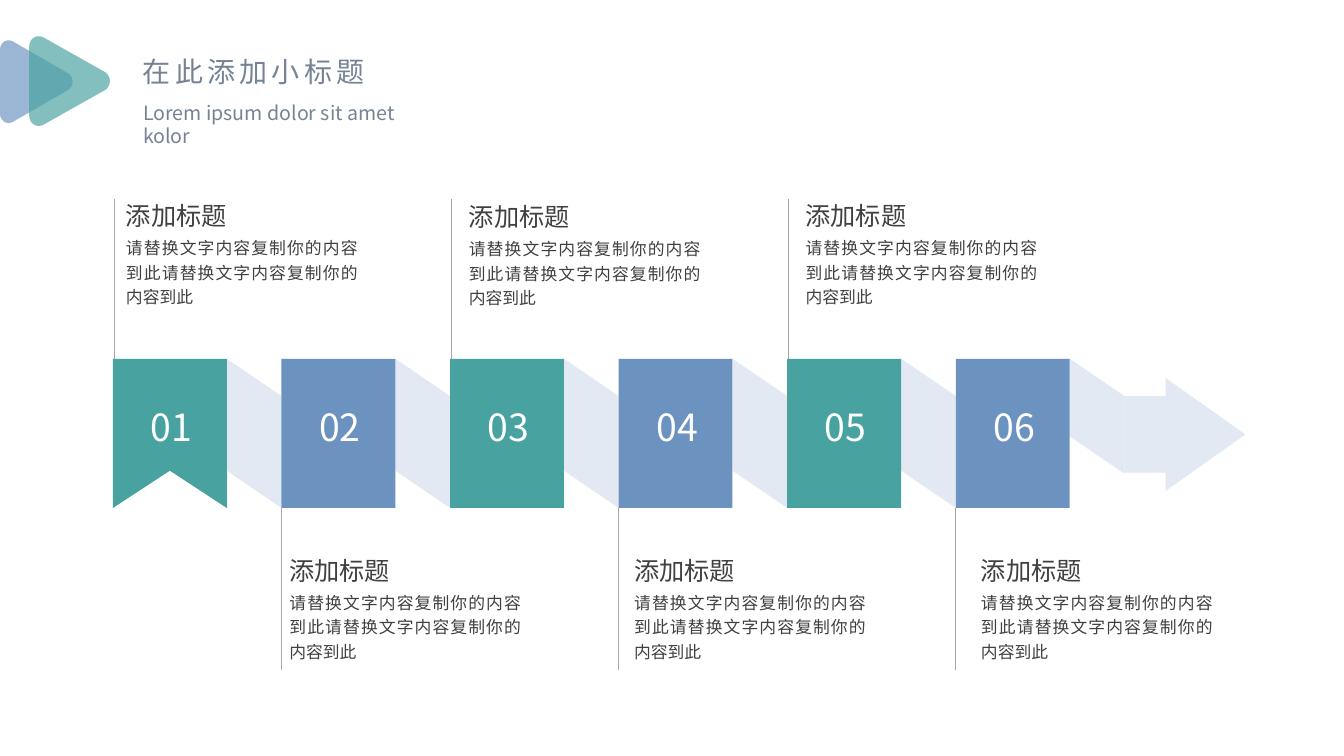
from lxml import etree
from pptx import Presentation
from pptx.dml.color import RGBColor
from pptx.enum.shapes import MSO_CONNECTOR, MSO_SHAPE
from pptx.enum.text import MSO_ANCHOR, PP_ALIGN
from pptx.oxml.ns import qn
from pptx.util import Inches, Pt

FONT = "Noto Sans CJK SC"
COLORS = {
    "teal": "48A2A0", "blue": "6C92C0", "pale": "E2E9F2", "rule": "A6A6A6",
    "title": "768394", "body": "404040", "white": "FFFFFF",
}
HEADING = "添加标题"
BODY = "请替换文字内容复制你的内容到此请替换文字内容复制你的内容到此"
# Left and top of each step's caption
CAPTIONS = [(1.12, 1.86), (2.74, 5.38), (4.52, 1.87),
            (6.16, 5.38), (7.86, 1.86), (9.6, 5.38)]
BLOCK_WIDTH, BLOCK_HEIGHT = 1.13, 1.48
FOLD = 0.37
RULE_LENGTH = 1.61


def rgb(name):
    return RGBColor.from_string(COLORS[name])


def paint(shape, color, opacity=None):
    shape.shadow.inherit = False
    shape.fill.solid()
    shape.fill.fore_color.rgb = rgb(color)
    shape.line.fill.background()
    if opacity is not None:
        tint = shape.fill._xPr.find(qn("a:solidFill"))[0]
        etree.SubElement(tint, qn("a:alpha")).set("val", str(opacity * 1000))


def add_polygon(slide, points, color, opacity=None):
    corners = [(Inches(x), Inches(y)) for x, y in points]
    builder = slide.shapes.build_freeform(*corners[0])
    builder.add_line_segments(corners[1:], close=True)
    paint(builder.convert_to_shape(), color, opacity)


def add_text(slide, box, lines, color, align=PP_ALIGN.LEFT):
    """Add a text box; lines holds a text and a size in points for each paragraph."""
    frame = slide.shapes.add_textbox(*map(Inches, box)).text_frame
    frame.word_wrap = True
    frame.text = "\n".join(text for text, _ in lines)
    for paragraph, (_, size) in zip(frame.paragraphs, lines):
        paragraph.alignment = align
        font = paragraph.runs[0].font
        font.size, font.name = Pt(size), FONT
        font.color.rgb = rgb(color)
        properties = paragraph.runs[0]._r.get_or_add_rPr()
        etree.SubElement(properties, qn("a:ea")).set("typeface", FONT)
    return frame


def bezier(start, control1, control2, end, steps=12):
    points = []
    for step in range(steps + 1):
        t = step / steps
        weights = ((1 - t) ** 3, 3 * t * (1 - t) ** 2, 3 * t * t * (1 - t), t ** 3)
        points.append(tuple(
            sum(weight * value for weight, value in zip(weights, values))
            for values in zip(start, control1, control2, end)))
    return points


def add_rounded_triangle(slide, box, color):
    """Add a translucent triangle with soft corners that points right."""
    left, top, width, height = box
    upper = bezier((0.19, 0.02), (0.1, -0.03), (0, 0.02), (0, 0.12))
    lower = [(x, 1 - y) for x, y in reversed(upper)]
    tip = bezier((0.94, 0.6), (1.02, 0.55), (1.02, 0.45), (0.94, 0.4))
    points = [(left + x * width, top + y * height) for x, y in upper + lower + tip]
    add_polygon(slide, points, color, opacity=68)


def add_header(slide, left, top):
    title = add_text(slide, (left, top, 2.46, 0.44), [("在此添加小标题", 20)], "title")
    title.word_wrap = False
    title.paragraphs[0].runs[0]._r.get_or_add_rPr().set("spc", "300")
    add_text(slide, (left, top + 0.46, 3.19, 0.34),
             [("Lorem ipsum dolor sit amet kolor", 14)], "title")
    add_rounded_triangle(slide, (0, top - 0.09, 0.72, 0.82), "blue")
    add_rounded_triangle(slide, (0.29, top - 0.13, 0.8, 0.89), "teal")


def add_rule(slide, x, top):
    rule = slide.shapes.add_connector(
        MSO_CONNECTOR.STRAIGHT, *map(Inches, (x, top, x, top + RULE_LENGTH)))
    rule.line.color.rgb = rgb("rule")
    rule.line.width = Pt(0.5)
    etree.SubElement(rule._element.spPr, qn("a:effectLst"))


def add_caption(slide, left, top):
    frame = add_text(slide, (left, top, 2.56, 1.36), [(HEADING, 18), (BODY, 12)],
                     "body", PP_ALIGN.JUSTIFY)
    frame.margin_left = frame.margin_right = Inches(0.13)
    frame.margin_top = frame.margin_bottom = Inches(0.07)
    for paragraph in frame.paragraphs:
        paragraph.line_spacing = 1.2
        paragraph.space_before = Pt(paragraph.runs[0].font.size.pt * 0.2)


def add_ribbon(slide, left, top, width, height):
    """Add the slanted band that leaves a block on its right side."""
    right = left + width
    add_polygon(slide, [(left, top), (right, top + FOLD),
                        (right, top + FOLD + height), (left, top + height)], "pale")


def add_arrow(slide, left, top, width, height):
    neck, right, bottom = left + 0.41, left + width, top + height
    inset = 0.18
    add_polygon(slide, [(left, top + inset), (neck, top + inset), (neck, top),
                        (right, top + height / 2), (neck, bottom),
                        (neck, bottom - inset), (left, bottom - inset)], "pale")


def add_block(slide, index, left, top):
    color = "blue" if index % 2 else "teal"
    if index == 0:
        right, bottom = left + BLOCK_WIDTH, top + BLOCK_HEIGHT
        add_polygon(slide, [(left, top), (right, top), (right, bottom),
                            (left + BLOCK_WIDTH / 2, bottom - FOLD), (left, bottom)], color)
    else:
        box = map(Inches, (left, top, BLOCK_WIDTH, BLOCK_HEIGHT))
        paint(slide.shapes.add_shape(MSO_SHAPE.RECTANGLE, *box), color)
    frame = add_text(slide, (left - 0.12, top + 0.18, 1.4, 0.99),
                     [(f"{index + 1:02}", 26.7)], "white", PP_ALIGN.CENTER)
    frame.vertical_anchor = MSO_ANCHOR.MIDDLE
    frame.paragraphs[0].space_before = Pt(5.3)


def add_timeline(slide, left, top, span):
    """Add six folded steps, span being the distance from first to last."""
    last = len(CAPTIONS) - 1
    pitch = span / last
    gap = pitch - BLOCK_WIDTH
    lefts = [left + index * pitch for index in range(last + 1)]
    for index, x in enumerate(lefts):
        if index % 2:
            add_rule(slide, x, top + BLOCK_HEIGHT)
        else:
            add_rule(slide, x + 0.01, top - RULE_LENGTH + 0.02)
        height = 0.77 if index == last else BLOCK_HEIGHT - FOLD
        add_ribbon(slide, x + BLOCK_WIDTH, top, gap, height)
    add_arrow(slide, lefts[-1] + pitch, top + 0.19, 1.2, 1.12)
    for index, x in enumerate(lefts):
        add_block(slide, index, x, top)
    for caption in CAPTIONS:
        add_caption(slide, *caption)


def main():
    presentation = Presentation()
    presentation.slide_width = Inches(13.33)
    presentation.slide_height = Inches(7.5)
    slide = presentation.slides.add_slide(presentation.slide_layouts[6])
    add_header(slide, 1.32, 0.49)
    add_timeline(slide, 1.12, 3.56, 8.36)
    presentation.save("out.pptx")


if __name__ == "__main__":
    main()
